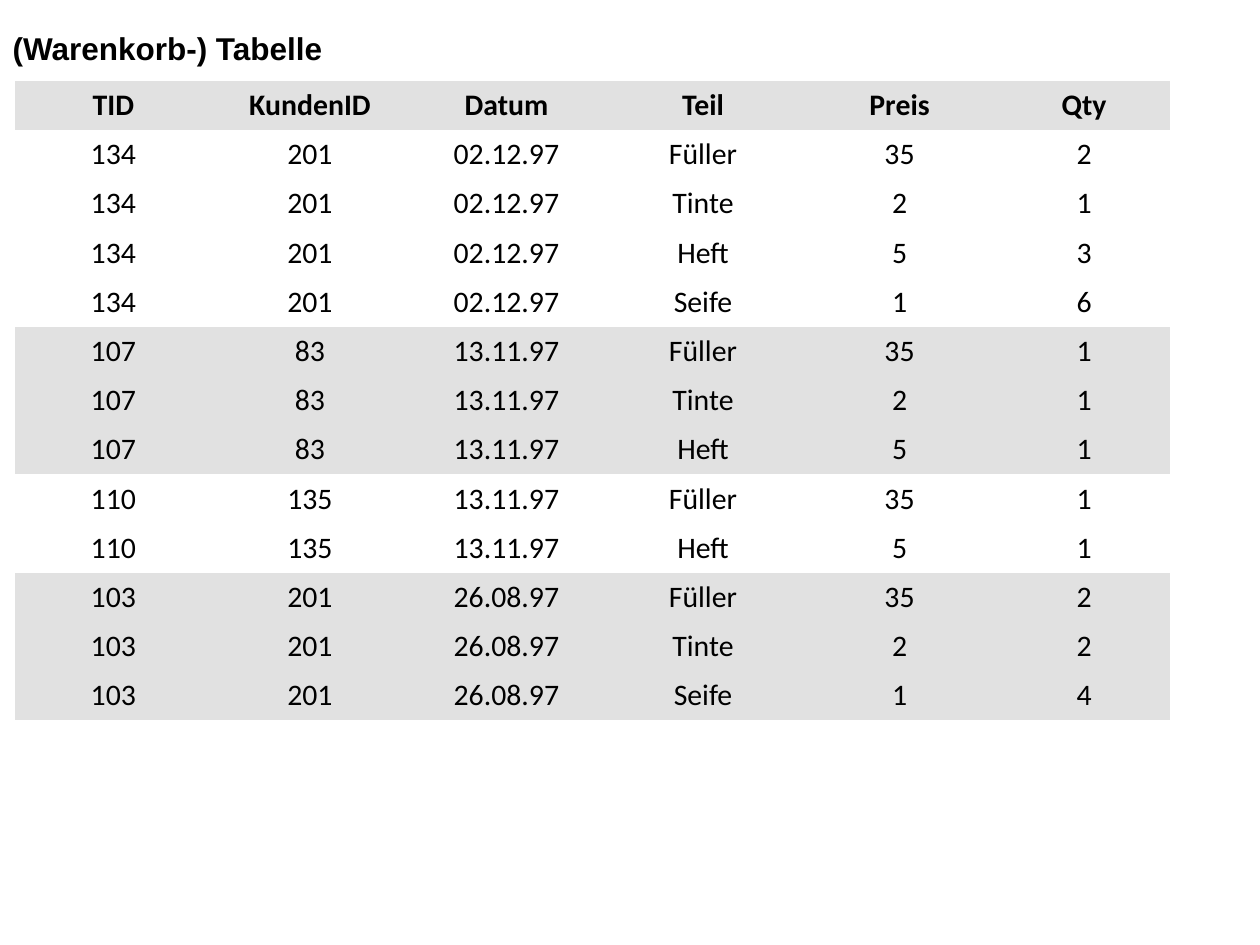
from pptx import Presentation
from pptx.dml.color import RGBColor
from pptx.enum.text import MSO_ANCHOR as Anchor, PP_ALIGN as Align
from pptx.oxml.ns import qn
from pptx.util import Inches, Pt

BLACK = RGBColor(0x00, 0x00, 0x00)
WHITE = RGBColor(0xFF, 0xFF, 0xFF)
GREY = RGBColor(0xE1, 0xE1, 0xE1)
NO_STYLE_NO_GRID = "{2D5ABB26-0587-4C30-8999-92F81FD0307C}"

TITLE = "(Warenkorb-) Tabelle"
HEADER = ("TID", "KundenID", "Datum", "Teil", "Preis", "Qty")
PRICES = {"Füller": "35", "Tinte": "2", "Heft": "5", "Seife": "1"}
BASKETS = [
    ("134", "201", "02.12.97", [("Füller", "2"), ("Tinte", "1"), ("Heft", "3"), ("Seife", "6")]),
    ("107", "83", "13.11.97", [("Füller", "1"), ("Tinte", "1"), ("Heft", "1")]),
    ("110", "135", "13.11.97", [("Füller", "1"), ("Heft", "1")]),
    ("103", "201", "26.08.97", [("Füller", "2"), ("Tinte", "2"), ("Seife", "4")]),
]
COLUMN_WIDTHS = [1.56] * 5 + [1.37]
TABLE_LEFT, TABLE_TOP, TABLE_HEIGHT = 0.12, 0.64, 5.08


def write(frame, text, font="Calibri", size=17, bold=False, align=Align.CENTER):
    para = frame.paragraphs[0]
    para.alignment = align
    span = para.add_run()
    span.text = text
    span.font.name = font
    span.font.size = Pt(size)
    span.font.bold = bold
    span.font.color.rgb = BLACK


def basket_rows():
    rows = [(HEADER, GREY)]
    for index, (basket, customer, date, items) in enumerate(BASKETS):
        fill = GREY if index % 2 else WHITE
        for item, quantity in items:
            rows.append(((basket, customer, date, item, PRICES[item], quantity), fill))
    return rows


def add_title(page):
    box = page.shapes.title
    box.left, box.top, box.width, box.height = Inches(0), Inches(0.13), Inches(10), Inches(0.5)
    box.text_frame.vertical_anchor = Anchor.MIDDLE
    write(box.text_frame, TITLE, font="Arial", size=18, bold=True, align=Align.LEFT)


def add_basket_table(page):
    rows = basket_rows()
    table = page.shapes.add_table(
        len(rows), len(HEADER), Inches(TABLE_LEFT), Inches(TABLE_TOP),
        Inches(sum(COLUMN_WIDTHS)), Inches(TABLE_HEIGHT)).table
    table.horz_banding = False
    table._tbl.tblPr.find(qn("a:tableStyleId")).text = NO_STYLE_NO_GRID
    for column, width in zip(table.columns, COLUMN_WIDTHS):
        column.width = Inches(width)
    for row, (values, fill) in zip(table.rows, rows):
        for cell, value in zip(row.cells, values):
            cell.fill.solid()
            cell.fill.fore_color.rgb = fill
            cell.vertical_anchor = Anchor.MIDDLE
            write(cell.text_frame, value, bold=values is HEADER)


def main():
    deck = Presentation()
    deck.slide_width, deck.slide_height = Inches(10), Inches(7.5)
    page = deck.slides.add_slide(deck.slide_layouts[5])
    add_title(page)
    add_basket_table(page)
    deck.save("out.pptx")


if __name__ == "__main__":
    main()
